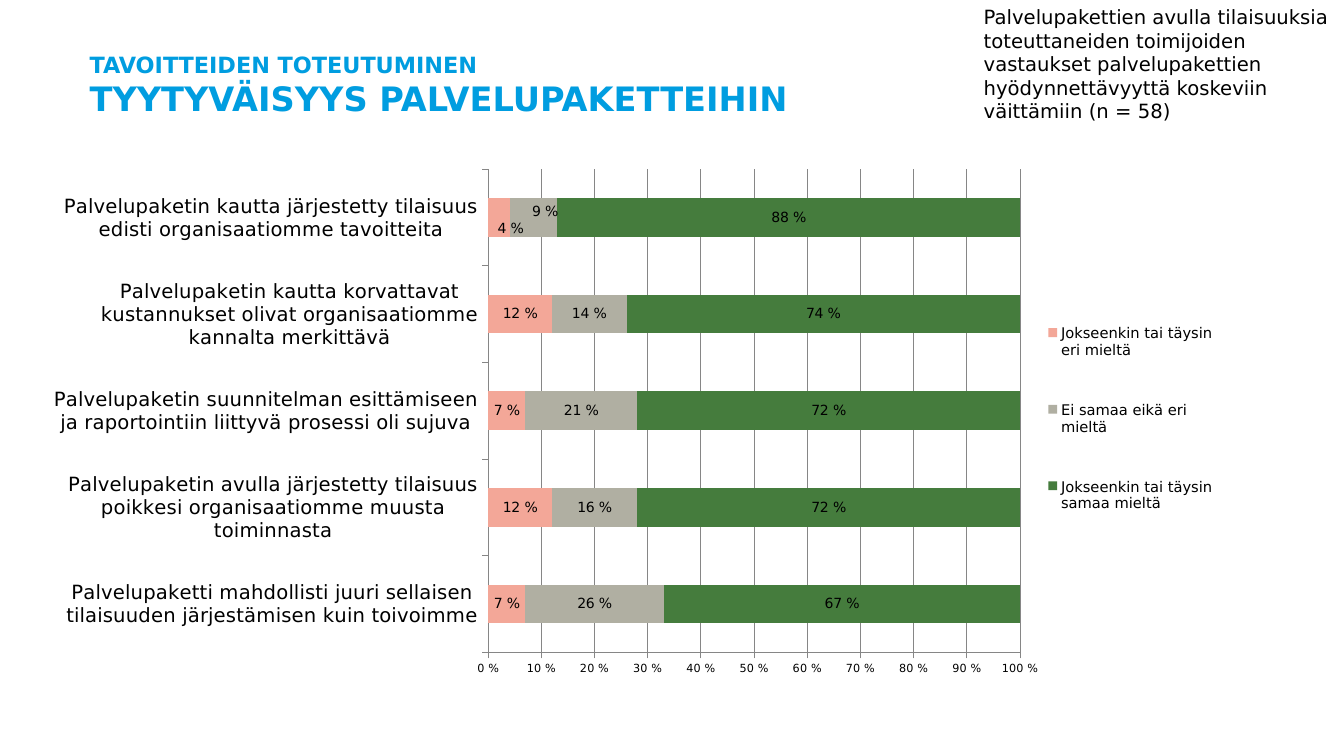
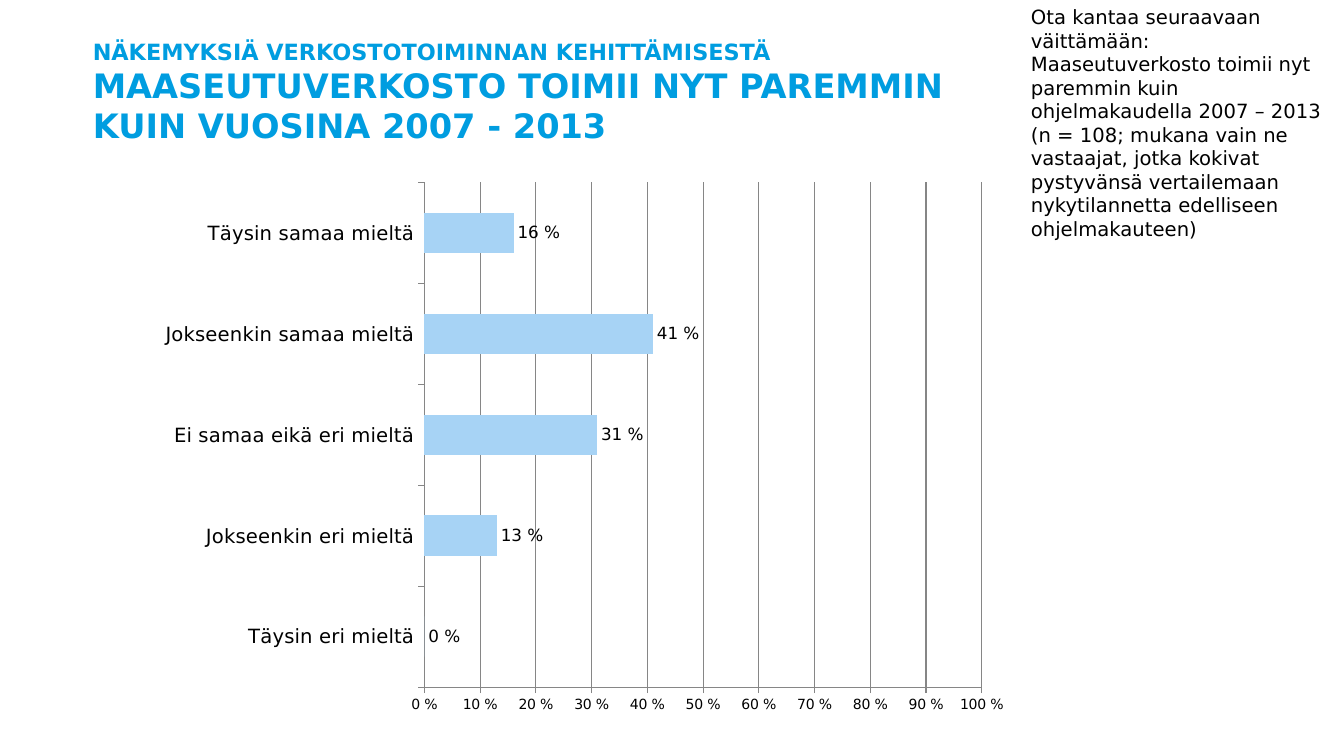
from dataclasses import dataclass

from lxml import etree
from pptx import Presentation
from pptx import util as u
from pptx.chart import data as chart_data
from pptx.dml.color import RGBColor
from pptx.enum import chart as ce
from pptx.enum import text
from pptx.oxml import ns


@dataclass(frozen=True)
class Theme:
    """Colours, font and type sizes shared by the slides."""

    font: str = "DejaVu Sans"
    title: str = "009DE0"
    ink: str = "000000"
    grid: str = "868686"
    disagree: str = "F3A798"
    neutral: str = "B0AFA2"
    agree: str = "457C3D"
    single: str = "A7D3F5"
    kicker_size: float = 16
    title_size: float = 24
    body_size: float = 14
    label_size: float = 10
    legend_size: float = 10.5
    percent: str = r"0\ %"


THEME = Theme()


def style(font, size, colour=THEME.ink, bold=False):
    """Apply the theme font with a size, colour and weight."""
    font.name, font.size, font.bold = THEME.font, u.Pt(size), bold
    font.color.rgb = RGBColor.from_string(colour)


def lengths(box):
    """Turn a box in centimetres into lengths."""
    return [u.Cm(side) for side in box]


def add_title(page, box, kicker, lines):
    """Place the small heading and the title lines under it."""
    frame = page.shapes.add_textbox(*lengths(box)).text_frame
    frame.word_wrap = True
    frame.margin_left = frame.margin_right = frame.margin_bottom = 0
    frame.margin_top = u.Cm(0.05)
    para = frame.paragraphs[0]
    span = para.add_run()
    span.text = kicker
    style(span.font, THEME.kicker_size, THEME.title, True)
    for line in lines:
        para.add_line_break()
        span = para.add_run()
        span.text = line
        style(span.font, THEME.title_size, THEME.title, True)


def add_note(page, box, words):
    """Place the note about the respondents."""
    frame = page.shapes.add_textbox(*lengths(box)).text_frame
    frame.word_wrap = True
    frame.auto_size = text.MSO_AUTO_SIZE.SHAPE_TO_FIT_TEXT
    span = frame.paragraphs[0].add_run()
    span.text = words
    style(span.font, THEME.body_size)


def set_layout(parent, index, inner=False, **places):
    """Give a chart part a manual layout in fractions of the chart."""
    for old in parent.findall(ns.qn("c:layout")):
        parent.remove(old)
    layout = etree.Element(ns.qn("c:layout"))
    parent.insert(index, layout)
    manual = etree.SubElement(layout, ns.qn("c:manualLayout"))
    settings = {"layoutTarget": "inner"} if inner else {}
    if "w" in places:
        settings.update(xMode="edge", yMode="edge")
    settings.update(places)
    for name, value in settings.items():
        etree.SubElement(manual, ns.qn(f"c:{name}")).set("val", str(value))


def shift_label(series, point, x, y):
    """Move one value label away from its bar's centre."""
    label = series.points[point].data_label
    label.position = ce.XL_LABEL_POSITION.CENTER
    element = series.data_labels._element.find(ns.qn("c:dLbl"))
    set_layout(element, 1, x=x, y=y)
    number = etree.Element(ns.qn("c:numFmt"))
    number.set("formatCode", THEME.percent)
    number.set("sourceLinked", "0")
    element.insert(2, number)


def style_axes(chart, value_size):
    """Format both axes and the gridlines."""
    category, value = chart.category_axis, chart.value_axis
    value.minimum_scale, value.maximum_scale, value.major_unit = 0, 1, 0.1
    value.has_major_gridlines = True
    value.tick_labels.number_format = THEME.percent
    value.tick_labels.number_format_is_linked = False
    for axis, size in ((category, THEME.body_size), (value, value_size)):
        axis.major_tick_mark = ce.XL_TICK_MARK.OUTSIDE
        axis.minor_tick_mark = ce.XL_TICK_MARK.NONE
        style(axis.tick_labels.font, size)
    for part in (category, value, value.major_gridlines):
        part.format.line.color.rgb = RGBColor.from_string(THEME.grid)
        part.format.line.width = u.Pt(0.75)


def add_bars(page, box, categories, rows, stacked, label_size, value_size):
    """Place a horizontal bar chart of shares and return it."""
    table = chart_data.CategoryChartData(number_format=THEME.percent)
    table.categories = categories
    for name, values, _ in rows:
        table.add_series(name, values)
    kind = ce.XL_CHART_TYPE.BAR_STACKED if stacked else ce.XL_CHART_TYPE.BAR_CLUSTERED
    place = ce.XL_LABEL_POSITION.CENTER if stacked else ce.XL_LABEL_POSITION.OUTSIDE_END
    chart = page.shapes.add_chart(kind, *lengths(box), table).chart
    chart.has_title = chart.has_legend = False
    style(chart.font, THEME.label_size)
    plot = chart.plots[0]
    plot.vary_by_categories = False
    plot.gap_width, plot.overlap = 150, 100 if stacked else 0
    for series, (_, _, colour) in zip(plot.series, rows):
        series.format.fill.solid()
        series.format.fill.fore_color.rgb = RGBColor.from_string(colour)
        labels = series.data_labels
        labels.show_value = True
        labels.number_format = THEME.percent
        labels.number_format_is_linked = False
        labels.position = place
        style(labels.font, label_size)
    style_axes(chart, value_size)
    return chart


def add_legend(chart):
    """Place the legend to the right of the bars."""
    chart.has_legend = True
    legend = chart.legend
    legend.position = ce.XL_LEGEND_POSITION.RIGHT
    legend.include_in_layout = False
    style(legend.font, THEME.legend_size)
    set_layout(legend._element, 1, x=0.85, y=0.25, w=0.15, h=0.48)


def satisfaction_slide(page):
    """Build the slide on satisfaction with the service packages."""
    add_title(page, (2.26, 1.24, 29.34, 2.08), "TAVOITTEIDEN TOTEUTUMINEN",
              ["TYYTYVÄISYYS PALVELUPAKETTEIHIN"])
    categories = [
        "Palvelupaketti mahdollisti juuri sellaisen tilaisuuden järjestämisen kuin toivoimme",
        "Palvelupaketin avulla järjestetty tilaisuus poikkesi organisaatiomme muusta toiminnasta",
        "Palvelupaketin suunnitelman esittämiseen ja raportointiin liittyvä prosessi oli sujuva",
        "Palvelupaketin kautta korvattavat kustannukset olivat organisaatiomme kannalta merkittävä",
        "Palvelupaketin kautta järjestetty tilaisuus edisti organisaatiomme tavoitteita",
    ]
    rows = [
        ("Jokseenkin tai täysin eri mieltä", (0.07, 0.12, 0.07, 0.12, 0.04), THEME.disagree),
        ("Ei samaa eikä eri mieltä", (0.26, 0.16, 0.21, 0.14, 0.09), THEME.neutral),
        ("Jokseenkin tai täysin samaa mieltä", (0.67, 0.72, 0.72, 0.74, 0.88), THEME.agree),
    ]
    chart = add_bars(page, (1.12, 3.53, 29.59, 14.33), categories, rows,
                     stacked=True, label_size=THEME.label_size, value_size=8)
    plot_area = chart._chartSpace.chart.plotArea
    set_layout(plot_area, 0, inner=True, x=0.378, y=0.051, w=0.453, h=0.85)
    add_legend(chart)
    disagree, neutral, _ = chart.plots[0].series
    shift_label(disagree, 4, 0.01, 0.02)
    shift_label(neutral, 4, 0.01, -0.01)
    add_note(page, (24.54, 0, 9.32, 3.25),
             "Palvelupakettien avulla tilaisuuksia toteuttaneiden toimijoiden vastaukset "
             "palvelupakettien hyödynnettävyyttä koskeviin väittämiin (n = 58)")


def network_slide(page):
    """Build the slide on how the network works now."""
    add_title(page, (2.34, 0.91, 22.4, 2.08), "NÄKEMYKSIÄ VERKOSTOTOIMINNAN KEHITTÄMISESTÄ",
              ["MAASEUTUVERKOSTO TOIMII NYT PAREMMIN", "KUIN VUOSINA 2007 - 2013"])
    categories = ["Täysin eri mieltä", "Jokseenkin eri mieltä", "Ei samaa eikä eri mieltä",
                  "Jokseenkin samaa mieltä", "Täysin samaa mieltä"]
    rows = [("Series 1", (0, 0.13, 0.31, 0.41, 0.16), THEME.single)]
    add_bars(page, (3.73, 4.32, 22, 13.92), categories, rows,
             stacked=False, label_size=12, value_size=THEME.label_size)
    add_note(page, (25.73, 0, 8.13, 6.25),
             "Ota kantaa seuraavaan väittämään: Maaseutuverkosto toimii nyt paremmin kuin "
             "ohjelmakaudella 2007 – 2013 (n = 108; mukana vain ne vastaajat, jotka kokivat "
             "pystyvänsä vertailemaan nykytilannetta edelliseen ohjelmakauteen)")


def main():
    """Build and save the deck."""
    deck = Presentation()
    deck.slide_width, deck.slide_height = u.Cm(33.87), u.Cm(19.05)
    for build in (satisfaction_slide, network_slide):
        build(deck.slides.add_slide(deck.slide_layouts[6]))
    deck.save("out.pptx")


if __name__ == "__main__":
    main()
